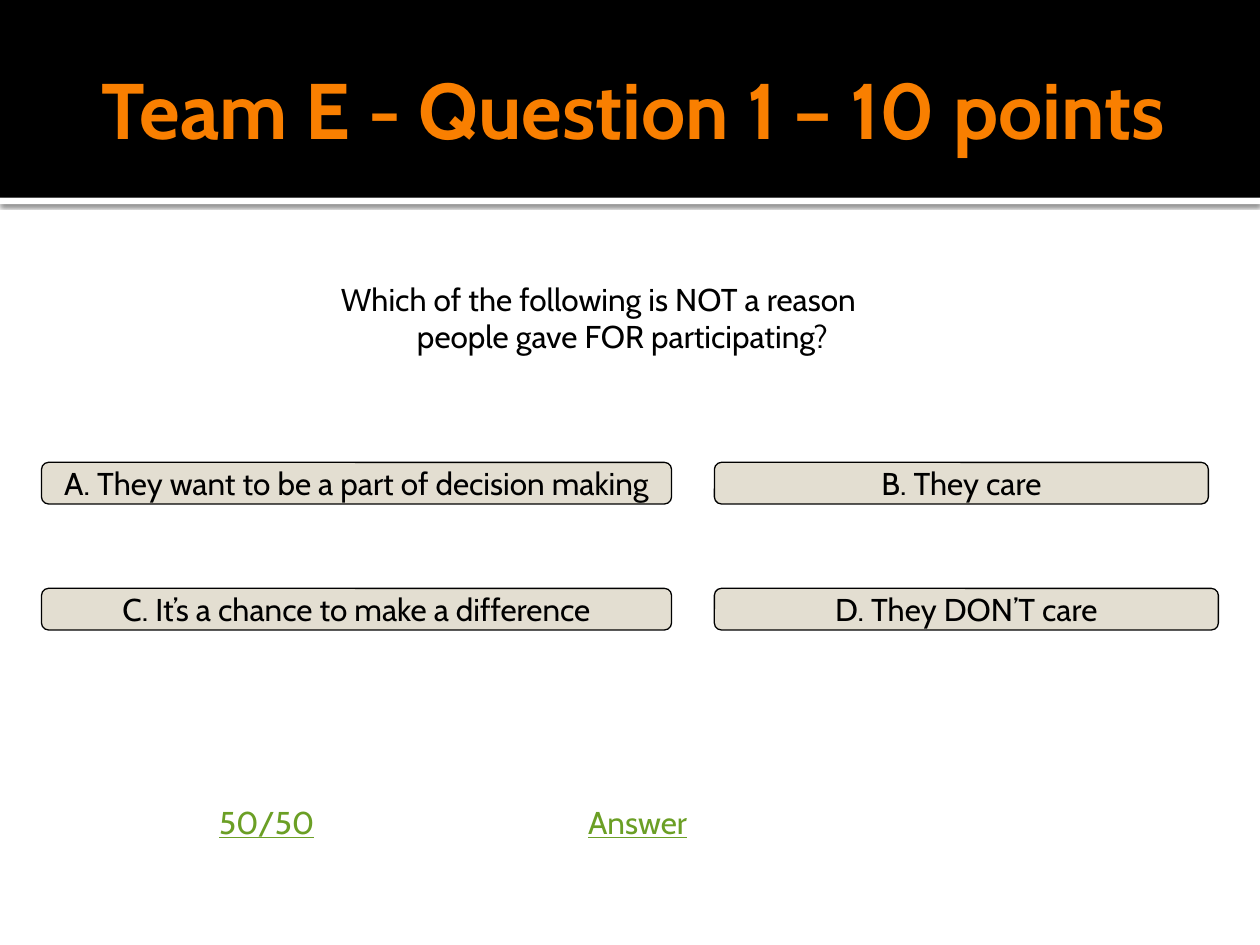
from lxml import etree
from pptx import Presentation
from pptx.dml.color import RGBColor
from pptx.enum.shapes import MSO_SHAPE
from pptx.enum.text import MSO_ANCHOR, MSO_AUTO_SIZE, PP_ALIGN
from pptx.oxml import parse_xml
from pptx.oxml.ns import nsdecls
from pptx.util import Inches, Pt

BLACK = RGBColor(0x00, 0x00, 0x00)
WHITE = RGBColor(0xFF, 0xFF, 0xFF)
ORANGE = RGBColor(0xF9, 0x7F, 0x00)
SAND = RGBColor(0xE3, 0xDE, 0xD1)
GREEN = RGBColor(0x6B, 0x9F, 0x25)

SHADOW = (
    f'<a:effectLst {nsdecls("a")}>'
    '<a:outerShdw blurRad="31750" dist="10160" dir="5400000" rotWithShape="0">'
    '<a:srgbClr val="000000"><a:alpha val="60000"/></a:srgbClr>'
    '</a:outerShdw></a:effectLst>'
)


def write(frame, text, size=18, color=BLACK, bold=False, under=False,
          left=0, first=0):
    """Fill a text frame with one centred paragraph; left and first are indents."""
    par = frame.paragraphs[0]
    par.alignment = PP_ALIGN.CENTER
    if left:
        props = par._p.get_or_add_pPr()
        props.set("marL", str(Inches(left)))
        props.set("indent", str(Inches(first)))
    run = par.add_run()
    run.text = text
    font = run.font
    font.name = "Cabin"
    font.size = Pt(size)
    font.bold = bold
    font.underline = under
    font.color.rgb = color


class Quiz:
    def __init__(self, deck):
        self.slide = deck.slides.add_slide(deck.slide_layouts[5])
        self.shapes = self.slide.shapes

    def block(self, kind, box, fill):
        shape = self.shapes.add_shape(kind, *map(Inches, box))
        shape.fill.solid()
        shape.fill.fore_color.rgb = fill
        shape.line.fill.background()
        shape.shadow.inherit = False
        return shape

    def band(self, box, fill, shade=False):
        shape = self.block(MSO_SHAPE.RECTANGLE, box, fill)
        if shade:
            props = shape.element.spPr
            for old in props.findall("{*}effectLst"):
                props.replace(old, parse_xml(SHADOW))

    def title(self, text, box):
        title = self.shapes.title
        title.left, title.top, title.width, title.height = map(Inches, box)
        frame = title.text_frame
        frame.word_wrap = True
        frame.auto_size = MSO_AUTO_SIZE.NONE
        frame.vertical_anchor = MSO_ANCHOR.MIDDLE
        frame.margin_right = Inches(0.05)
        write(frame, text, size=45, color=ORANGE, bold=True)
        # Bring the title in front of the bands
        title.element.getparent().append(title.element)

    def option(self, text, box):
        shape = self.block(MSO_SHAPE.ROUNDED_RECTANGLE, box, SAND)
        shape.line.color.rgb = BLACK
        shape.line.width = Pt(0.75)
        frame = shape.text_frame
        frame.word_wrap = False
        frame.vertical_anchor = MSO_ANCHOR.MIDDLE
        write(frame, text)

    def prompt(self, text, box):
        frame = self.shapes.add_textbox(*map(Inches, box)).text_frame
        frame.word_wrap = True
        frame.auto_size = MSO_AUTO_SIZE.SHAPE_TO_FIT_TEXT
        write(frame, text, left=0.38, first=-0.38)

    def table(self, words, box):
        table = self.shapes.add_table(1, len(words), *map(Inches, box)).table
        table.first_row = False
        table.horz_banding = False
        for cell, word in zip(table.iter_cells(), words):
            cell.fill.background()
            if word:
                write(cell.text_frame, word, color=GREEN, under=True, left=0.13)


def main():
    deck = Presentation()
    deck.slide_width, deck.slide_height = Inches(10), Inches(7.5)
    quiz = Quiz(deck)
    quiz.band((0, 1.57, 10, 0.05), WHITE, shade=True)
    quiz.band((0, 0, 10, 1.57), BLACK)
    quiz.title("Team E - Question 1 – 10 points", (0.5, 0.17, 9, 1.37))
    quiz.prompt("Which of the following is NOT a reason people gave FOR "
                "participating?", (2.25, 2.17, 5, 0.7))
    rows = [
        (3.67, "A. They want to be a part of decision making",
         "B. They care", 3.92),
        (4.67, "C. It’s a chance to make a difference",
         "D. They DON’T care", 4),
    ]
    for top, one, two, width in rows:
        quiz.option(one, (0.33, top, 5, 0.33))
        quiz.option(two, (5.67, top, width, 0.33))
    quiz.table(["50/50", "Answer", ""], (0.58, 6.33, 8.83, 0.58))
    deck.save("out.pptx")


if __name__ == "__main__":
    main()
